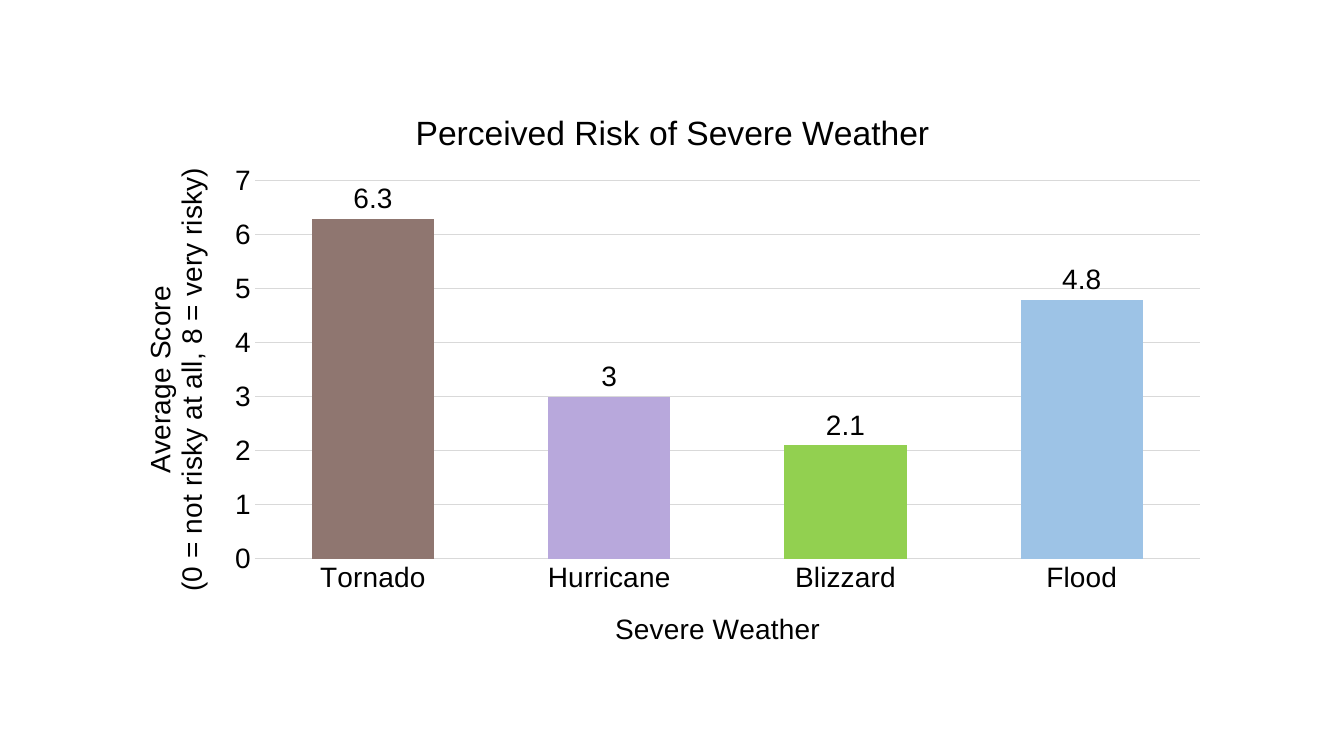
from lxml import etree
from pptx import Presentation
from pptx import util as u
from pptx.chart.data import CategoryChartData
from pptx.dml.color import RGBColor
from pptx.enum import chart as kinds
from pptx.oxml import ns

COLORS = {
    "text": "000000",
    "rule": "D9D9D9",
    "series": "ED7D31",
    "Tornado": "8F7670",
    "Hurricane": "B8A8DC",
    "Blizzard": "92D050",
    "Flood": "9DC3E6",
}
SCORES = {"Tornado": 6.3, "Hurricane": 3, "Blizzard": 2.1, "Flood": 4.8}
PLOT_AREA = {"x": 0.12, "y": 0.16, "w": 0.86, "h": 0.65}


class SlideBuilder:
    font_name = "Arial"
    body_size = 20
    title_size = 24

    def __init__(self, page):
        self.page = page

    def color(self, name):
        return RGBColor.from_string(COLORS[name])

    def style_font(self, font, size):
        font.name = self.font_name
        font.size = u.Pt(size)
        font.bold = False
        font.color.rgb = self.color("text")

    def style_rule(self, line):
        line.color.rgb = self.color("rule")
        line.width = u.Pt(0.75)

    def title(self, owner, words, size):
        frame = owner.text_frame
        frame.text = words
        for para in frame.paragraphs:
            self.style_font(para.font, size)
            for span in para.runs:
                self.style_font(span.font, size)

    def axis(self, axis, words):
        self.title(axis.axis_title, words, self.body_size)
        axis.major_tick_mark = kinds.XL_TICK_MARK.NONE
        axis.minor_tick_mark = kinds.XL_TICK_MARK.NONE
        self.style_font(axis.tick_labels.font, self.body_size)

    def turn_upright(self, axis):
        body = axis.axis_title.element.find(".//" + ns.qn("a:bodyPr"))
        body.set("rot", "-5400000")
        body.set("vert", "horz")

    def place_plot(self, chart):
        area = chart.element.find(".//" + ns.qn("c:plotArea"))
        for old in area.findall(ns.qn("c:layout")):
            area.remove(old)
        layout = etree.Element(ns.qn("c:layout"))
        manual = etree.SubElement(layout, ns.qn("c:manualLayout"))
        settings = {"layoutTarget": "inner", "xMode": "edge", "yMode": "edge", **PLOT_AREA}
        for name, value in settings.items():
            etree.SubElement(manual, ns.qn("c:" + name)).set("val", str(value))
        area.insert(0, layout)

    def column_chart(self, left, top, width, height, scores):
        data = CategoryChartData()
        data.categories = list(scores)
        data.add_series("Series 1", list(scores.values()))
        chart = self.page.shapes.add_chart(
            kinds.XL_CHART_TYPE.COLUMN_CLUSTERED,
            u.Inches(left), u.Inches(top), u.Inches(width), u.Inches(height), data,
        ).chart
        self.style_font(chart.font, self.body_size)
        chart.has_legend = False
        chart.has_title = True
        self.title(chart.chart_title, "Perceived Risk of Severe Weather", self.title_size)
        chart.chart_title.include_in_layout = False

        self.axis(chart.category_axis, "Severe Weather")
        self.style_rule(chart.category_axis.format.line)

        score_axis = chart.value_axis
        self.axis(score_axis, "Average Score\n(0 = not risky at all, 8 = very risky)")
        self.turn_upright(score_axis)
        score_axis.minimum_scale = 0
        score_axis.maximum_scale = 7
        score_axis.major_unit = 1
        score_axis.format.line.fill.background()
        score_axis.has_major_gridlines = True
        self.style_rule(score_axis.major_gridlines.format.line)

        self.columns(chart.plots[0], scores)
        self.place_plot(chart)

    def columns(self, plot, scores):
        plot.gap_width = 93
        plot.overlap = -27
        plot.vary_by_categories = False
        series = plot.series[0]
        series.format.fill.solid()
        series.format.fill.fore_color.rgb = self.color("series")
        for index, name in enumerate(scores):
            fill = series.points[index].format.fill
            fill.solid()
            fill.fore_color.rgb = self.color(name)
        labels = series.data_labels
        labels.show_value = True
        labels.position = kinds.XL_LABEL_POSITION.OUTSIDE_END
        self.style_font(labels.font, self.body_size)


def main():
    deck = Presentation()
    deck.slide_width = u.Inches(13.33)
    deck.slide_height = u.Inches(7.5)
    page = deck.slides.add_slide(deck.slide_layouts[6])
    SlideBuilder(page).column_chart(1.22, 0.87, 10.9, 5.77, SCORES)
    deck.save("out.pptx")


if __name__ == "__main__":
    main()
